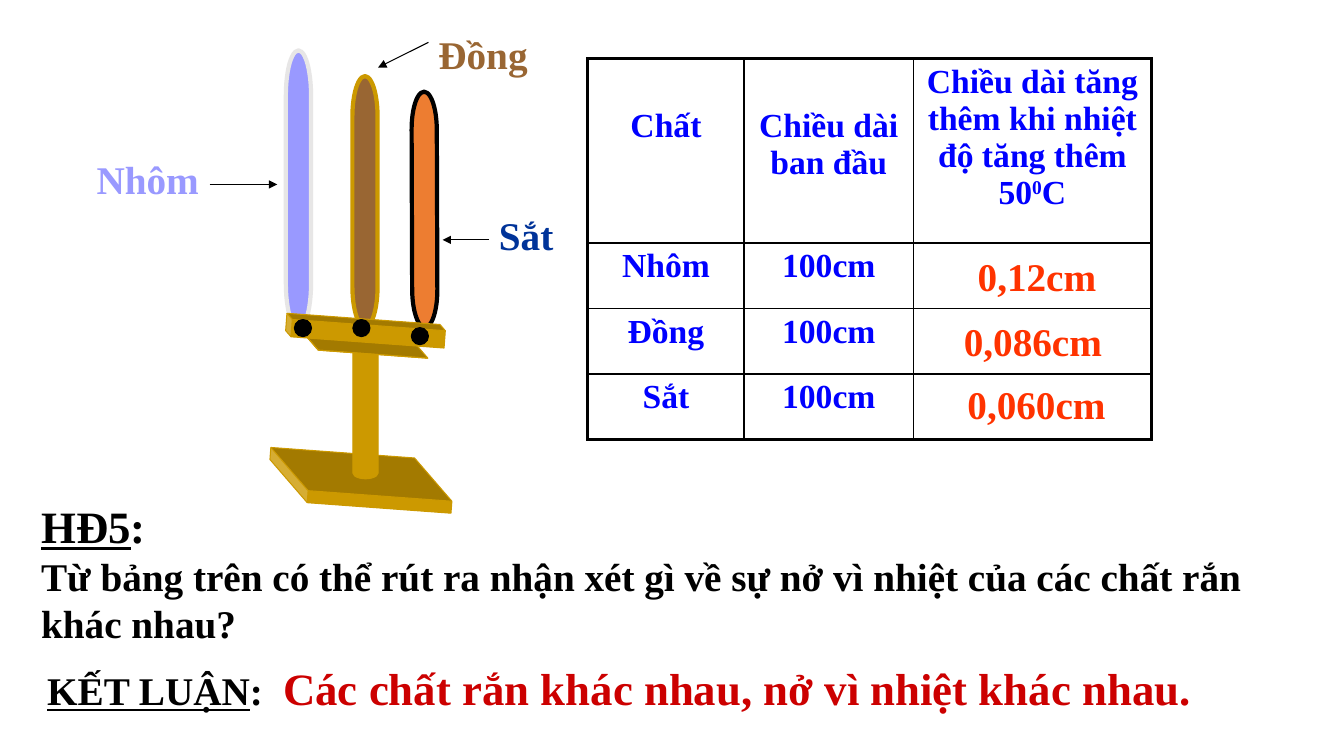
from lxml.etree import SubElement
from pptx import Presentation
from pptx.dml.color import RGBColor
from pptx.enum.shapes import MSO_CONNECTOR, MSO_SHAPE as Shape
from pptx.enum.text import MSO_AUTO_SIZE, PP_ALIGN as Align
from pptx.oxml.ns import qn
from pptx.util import Inches, Pt

FONT = "Times New Roman"
COLORS = {
    "brass": "CC9900", "copper": "996633", "aluminium": "9999FF", "silver": "E7E6E6",
    "iron": "ED7D31", "navy": "003399", "black": "000000", "blue": "0000FF",
    "orange": "FF3300", "red": "CC0000",
}

# kind, left, top, width, height, rotation, adjustment
STAND = [
    (Shape.CUBE, 3.32, 3.85, 0.52, 1.83, 274.2, 0.77),
    (Shape.CAN, 3.5, 3.33, 0.25, 1.42, 0, 0.459),
    (Shape.CUBE, 3.46, 2.71, 0.25, 1.34, 274.2, 1),
]
HOLDER = (Shape.CUBE, 3.51, 2.49, 0.23, 1.58, 274.2, 0.25)
# centre x, centre y, length, rotation, fill, outline
RODS = [
    (4.21, 2.08, 2.34, 89.8, "iron", "black"),
    (3.62, 2.0, 2.49, 90, "copper", "brass"),
    (2.96, 1.88, 2.76, 270, "aluminium", "silver"),
]
ROD_WIDTH = 0.25
SCREWS = [(4.08, 3.25), (2.92, 3.17), (3.5, 3.17)]
SCREW_SIZE = 0.17

# name, colour, box (left, top, width), arrow from, arrow to
LABELS = [
    ("Nhôm", "aluminium", (0.86, 1.49, 1.23), (2.08, 1.83), (2.75, 1.83)),
    ("Đồng", "copper", (4.25, 0.25, 1.1), (4.25, 0.42), (3.75, 0.67)),
    ("Sắt", "navy", (4.85, 2.05, 0.75), (4.85, 2.38), (4.39, 2.38)),
]

HEADERS = ["Chất", "Chiều dài ban đầu", "Chiều dài tăng thêm khi nhiệt độ tăng thêm 50"]
HEADER_TOPS = [0.49, 0.49, 0.05]
SUBSTANCES = ["Nhôm", "Đồng", "Sắt"]
START_LENGTH = "100cm"
COLUMN_WIDTHS = [1.55, 1.68, 2.36]
ROW_HEIGHTS = [1.83, 0.65, 0.65, 0.65]
EXPANSIONS = [
    ("0,12cm", 9.48, 2.45, 1.61),
    ("0,086cm", 9.33, 3.1, 1.83),
    ("0,060cm", 9.39, 3.72, 1.78),
]

ACTIVITY = "HĐ5"
QUESTION = "Từ bảng trên có thể rút ra nhận xét gì về sự nở vì nhiệt của các chất rắn khác nhau?"
CONCLUSION_TITLE = "KẾT LUẬN"
CONCLUSION = "Các chất rắn khác nhau, nở vì nhiệt khác nhau."


def rgb(name):
    return RGBColor.from_string(COLORS[name])


def set_font(font, size, color):
    font.name, font.size, font.bold = FONT, Pt(size), True
    font.color.rgb = rgb(color)


def add_part(kind, left, top, width, height, rotation=0, adjustment=None,
             fill="brass", outline="brass", weight=0.75):
    part = slide.shapes.add_shape(kind, *map(Inches, (left, top, width, height)))
    part.shadow.inherit = False
    part.rotation = rotation
    if adjustment is not None:
        part.adjustments[0] = adjustment
    part.fill.solid()
    part.fill.fore_color.rgb = rgb(fill)
    part.line.color.rgb = rgb(outline)
    part.line.width = Pt(weight)


def add_arrow(start, end):
    arrow = slide.shapes.add_connector(MSO_CONNECTOR.STRAIGHT, *map(Inches, start + end))
    arrow.line.color.rgb = rgb("black")
    arrow.line.width = Pt(0.75)
    SubElement(arrow.line._get_or_add_ln(), qn("a:tailEnd"), type="triangle")
    SubElement(arrow._element.spPr, qn("a:effectLst"))


def add_text_frame(left, top, width, height=0.57, wrap=True):
    frame = slide.shapes.add_textbox(*map(Inches, (left, top, width, height))).text_frame
    frame.word_wrap = wrap
    frame.auto_size = MSO_AUTO_SIZE.SHAPE_TO_FIT_TEXT
    return frame


def add_underlined(paragraph, title):
    """Write a title whose colon is not underlined."""
    paragraph.add_run().text = title
    paragraph.runs[0].font.underline = True
    paragraph.add_run().text = ":"


def set_borders(cell, row, column):
    """Draw thick lines on the table's outer edge and thin ones inside."""
    outer = {
        "L": column == 0, "R": column == len(COLUMN_WIDTHS) - 1,
        "T": row == 0, "B": row == len(ROW_HEIGHTS) - 1,
    }
    properties = cell._tc.get_or_add_tcPr()
    for side, is_outer in outer.items():
        border = SubElement(properties, qn(f"a:ln{side}"), w=str(Pt(2.25 if is_outer else 1)))
        SubElement(SubElement(border, qn("a:solidFill")), qn("a:srgbClr"), val=COLORS["black"])
    cell.fill.background()


def add_length_table():
    table = slide.shapes.add_table(
        len(ROW_HEIGHTS), len(COLUMN_WIDTHS), Inches(5.83), Inches(0.58),
        Inches(sum(COLUMN_WIDTHS)), Inches(sum(ROW_HEIGHTS))).table
    table.first_row = table.horz_banding = False
    for column, width in zip(table.columns, COLUMN_WIDTHS):
        column.width = Inches(width)
    for row, height in zip(table.rows, ROW_HEIGHTS):
        row.height = Inches(height)
    rows = [HEADERS] + [[substance, START_LENGTH, ""] for substance in SUBSTANCES]
    for r, texts in enumerate(rows):
        for c, text in enumerate(texts):
            cell = table.cell(r, c)
            set_borders(cell, r, c)
            cell.margin_top = Inches(HEADER_TOPS[c] if r == 0 else 0.05)
            paragraph = cell.text_frame.paragraphs[0]
            paragraph.alignment = Align.CENTER
            set_font(paragraph.font, 24, "blue")
            if text:
                paragraph.add_run().text = text
    degrees = table.cell(0, 2).text_frame.paragraphs[0]
    exponent = degrees.add_run()
    exponent.text = "0"
    exponent.font._element.set("baseline", "30000")
    degrees.add_run().text = "C"


prs = Presentation()
prs.slide_width, prs.slide_height = Inches(13.33), Inches(7.5)
slide = prs.slides.add_slide(prs.slide_layouts[6])

for part in STAND:
    add_part(*part)
for x, y, length, rotation, fill, outline in RODS:
    add_part(Shape.FLOWCHART_TERMINATOR, x - length / 2, y - ROD_WIDTH / 2, length, ROD_WIDTH,
             rotation, fill=fill, outline=outline, weight=3)
add_part(*HOLDER)
for x, y in SCREWS:
    add_part(Shape.FLOWCHART_CONNECTOR, x, y, SCREW_SIZE, SCREW_SIZE, fill="black", outline="black")

for name, color, box, start, end in LABELS:
    label = add_text_frame(*box, wrap=False).paragraphs[0]
    label.text = name
    set_font(label.font, 28, color)
    add_arrow(start, end)

add_length_table()
for value, left, top, width in EXPANSIONS:
    expansion = add_text_frame(left, top, width).paragraphs[0]
    expansion.text = value
    expansion.alignment = Align.CENTER
    set_font(expansion.font, 28, "orange")

activity_frame = add_text_frame(0.31, 4.9, 12.78, 1.58)
heading = activity_frame.paragraphs[0]
add_underlined(heading, ACTIVITY)
set_font(heading.font, 32, "black")
question = activity_frame.add_paragraph()
question.text = QUESTION
set_font(question.font, 28, "black")

conclusion = add_text_frame(0.37, 6.51, 12.72, 0.64).paragraphs[0]
add_underlined(conclusion, CONCLUSION_TITLE)
conclusion.add_run().text = "\t" + CONCLUSION
tab_stops = SubElement(conclusion._p.get_or_add_pPr(), qn("a:tabLst"))
SubElement(tab_stops, qn("a:tab"), pos=str(Inches(2.34)), algn="l")
set_font(conclusion.font, 28, "black")
set_font(conclusion.runs[-1].font, 32, "red")

prs.save("out.pptx")
